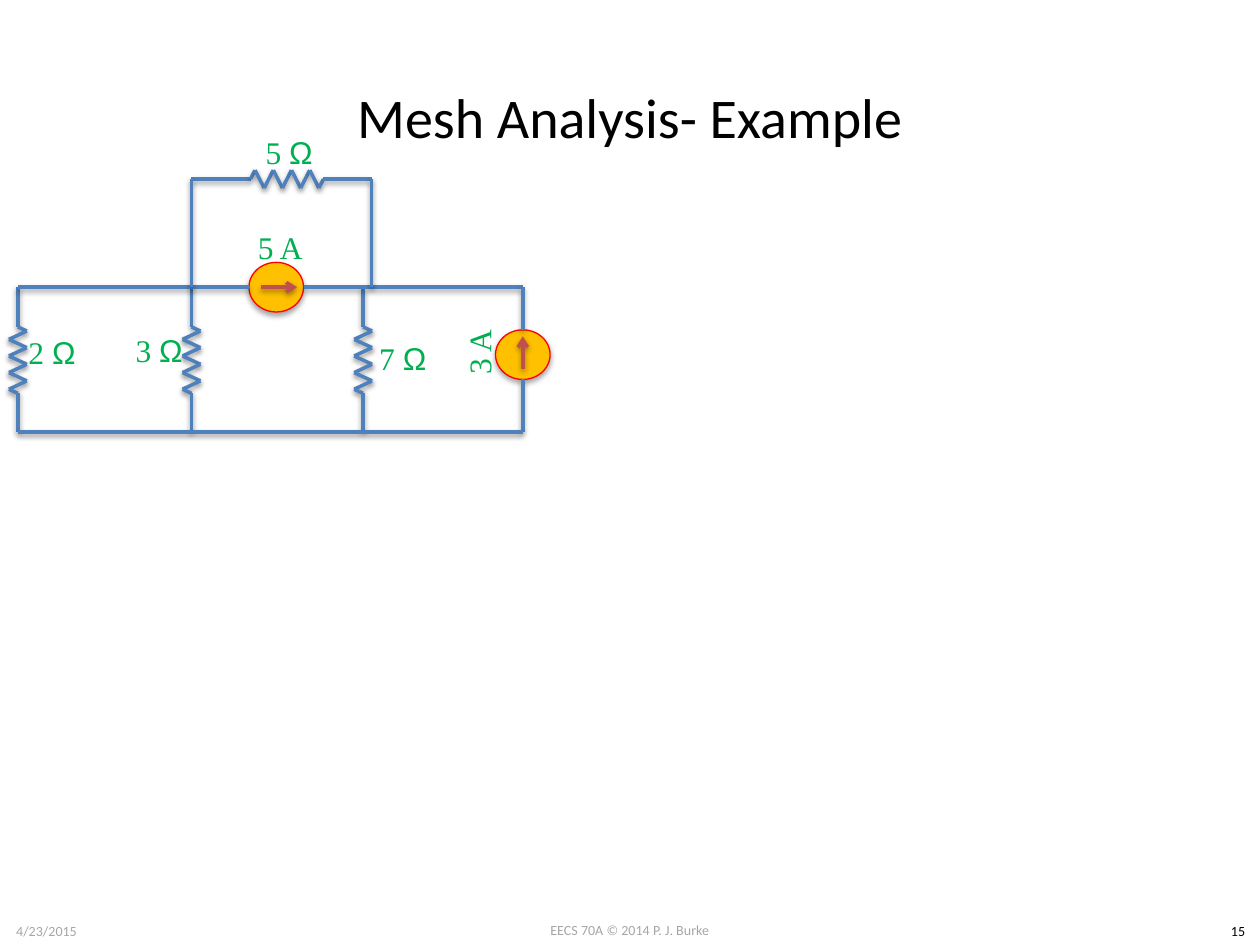
from lxml import etree
from pptx import Presentation
from pptx.dml.color import RGBColor
from pptx.enum.shapes import MSO_CONNECTOR, MSO_SHAPE
from pptx.enum.text import MSO_ANCHOR, PP_ALIGN
from pptx.oxml.ns import qn
from pptx.util import Cm, Pt

STRAIGHT = MSO_CONNECTOR.STRAIGHT
OVAL = MSO_SHAPE.OVAL
MIDDLE, TOP = MSO_ANCHOR.MIDDLE, MSO_ANCHOR.TOP
CENTER = PP_ALIGN.CENTER

BLACK = RGBColor(0x00, 0x00, 0x00)
GRAY = RGBColor(0xA6, 0xA6, 0xA6)
GREEN = RGBColor(0x00, 0xB0, 0x50)
WIRE_BLUE = RGBColor(0x4F, 0x81, 0xBD)
ARROW_RED = RGBColor(0xC0, 0x50, 0x4D)
SOURCE_FILL = RGBColor(0xFF, 0xC0, 0x00)
SOURCE_LINE = RGBColor(0xFF, 0x00, 0x00)

# Circuit nodes, in centimetres
LEFT, INNER_LEFT, INNER_RIGHT, LOOP_RIGHT, RIGHT = 0.36, 3.86, 7.32, 7.49, 10.54
LOOP_TOP, MID, BOTTOM = 3.61, 5.79, 8.71
SOURCE_WIDTH, SOURCE_HEIGHT = 1.1, 1.0
ACROSS_X, UP_Y = 5.57, 7.15
PEAKS, AMPLITUDE = 8, 0.18


def add_shadow(shape, opacity, distance):
    """Add a soft black shadow straight below the shape."""
    effects = etree.SubElement(shape.element.spPr, qn("a:effectLst"))
    shadow = etree.SubElement(
        effects, qn("a:outerShdw"), blurRad=str(Pt(3.1)), dist=str(Pt(distance)),
        dir="5400000", rotWithShape="0")
    color = etree.SubElement(shadow, qn("a:srgbClr"), val="000000")
    etree.SubElement(color, qn("a:alpha"), val=str(opacity * 1000))


def add_text(slide, text, center, size, font="Calibri", font_size=18,
             color=BLACK, anchor=MIDDLE, rotation=0, wrap=True):
    """Add centred text; ohm signs are set in Arial."""
    (x, y), (width, height) = center, size
    box = slide.shapes.add_textbox(
        Cm(x - width / 2), Cm(y - height / 2), Cm(width), Cm(height))
    box.rotation = rotation
    frame = box.text_frame
    frame.word_wrap = wrap
    frame.vertical_anchor = anchor
    paragraph = frame.paragraphs[0]
    paragraph.alignment = CENTER
    before, ohm, _ = text.partition("Ω")
    for part, name in ((before, font), (ohm, "Arial")):
        if part:
            run = paragraph.add_run()
            run.text = part
            run.font.name = name
            run.font.size = Pt(font_size)
            run.font.color.rgb = color


def add_label(slide, text, x, y, rotation=0):
    add_text(slide, text, (x, y), (2.46, 1.37), font="Times New Roman",
             color=GREEN, rotation=rotation)


def add_line(slide, start, end, color=WIRE_BLUE, arrow=False):
    points = [Cm(value) for value in (*start, *end)]
    connector = slide.shapes.add_connector(STRAIGHT, *points)
    connector.line.color.rgb = color
    connector.line.width = Pt(2)
    if arrow:
        outline = connector.element.spPr.find(qn("a:ln"))
        etree.SubElement(outline, qn("a:tailEnd"), type="arrow")
    add_shadow(connector, 38, 1.6)


def add_path(slide, points):
    for start, end in zip(points, points[1:]):
        add_line(slide, start, end)


def add_resistor(slide, start, end, lead, length):
    """Draw a zigzag of the given length after a lead, then wire to the end."""
    vertical = start[0] == end[0]

    def place(along, aside=0):
        if vertical:
            return start[0] + aside, start[1] + along
        return start[0] + along, start[1] - aside

    step = length / PEAKS
    peaks = [place(lead + (i + 0.5) * step, AMPLITUDE * (-1) ** i)
             for i in range(PEAKS)]
    add_path(slide, [start, place(lead), *peaks, place(lead + length), end])


def add_current_source(slide, x, y, arrow_start, arrow_end):
    circle = slide.shapes.add_shape(
        OVAL, Cm(x - SOURCE_WIDTH / 2), Cm(y - SOURCE_HEIGHT / 2),
        Cm(SOURCE_WIDTH), Cm(SOURCE_HEIGHT))
    circle.fill.solid()
    circle.fill.fore_color.rgb = SOURCE_FILL
    circle.line.color.rgb = SOURCE_LINE
    circle.line.width = Pt(0.75)
    add_shadow(circle, 35, 1.8)
    add_line(slide, arrow_start, arrow_end, color=ARROW_RED, arrow=True)


def add_circuit(slide):
    add_resistor(slide, (INNER_LEFT, LOOP_TOP), (LOOP_RIGHT, LOOP_TOP), 1.19, 1.47)
    for x in (LEFT, INNER_LEFT, INNER_RIGHT):
        add_resistor(slide, (x, MID), (x, BOTTOM), 0.8, 1.34)

    add_current_source(slide, RIGHT, UP_Y, (RIGHT, 7.44), (RIGHT, 6.78))
    add_current_source(slide, ACROSS_X, MID, (5.26, MID), (5.99, MID))

    half_width, half_height = SOURCE_WIDTH / 2, SOURCE_HEIGHT / 2
    for start, end in (
        ((LEFT, MID), (ACROSS_X - half_width, MID)),
        ((ACROSS_X + half_width, MID), (RIGHT, MID)),
        ((RIGHT, MID), (RIGHT, UP_Y - half_height)),
        ((RIGHT, UP_Y + half_height), (RIGHT, BOTTOM)),
        ((LEFT, BOTTOM), (RIGHT, BOTTOM)),
        ((INNER_LEFT, MID), (INNER_LEFT, LOOP_TOP)),
        ((LOOP_RIGHT, MID), (LOOP_RIGHT, LOOP_TOP)),
    ):
        add_line(slide, start, end)

    for text, x, y in (
        ("5 Ω", 5.83, 3.07),
        ("2 Ω", 1.05, 7.09),
        ("3 Ω", 3.21, 7.06),
        ("7 Ω", 8.12, 7.21),
        ("5 A", 5.65, 4.98),
    ):
        add_label(slide, text, x, y)
    add_label(slide, "3 A", 9.65, 7.09, rotation=270)


def add_footer(slide):
    for text, x, y, width, color in (
        ("EECS 70A © 2014 P. J. Burke", 12.7, 18.75, 5.92, GRAY),
        ("4/23/2015", 0.94, 18.77, 1.88, GRAY),
        ("15", 24.96, 18.77, 0.89, BLACK),
    ):
        add_text(slide, text, (x, y), (width, 0.61), font_size=8, color=color,
                 anchor=TOP, wrap=False)


def main():
    presentation = Presentation()
    presentation.slide_width = Cm(25.4)
    presentation.slide_height = Cm(19.05)
    slide = presentation.slides.add_slide(presentation.slide_layouts[6])
    add_footer(slide)
    add_text(slide, "Mesh Analysis- Example", (12.7, 2.35), (22.86, 3.18),
             font_size=32)
    add_circuit(slide)
    presentation.save("out.pptx")


if __name__ == "__main__":
    main()
